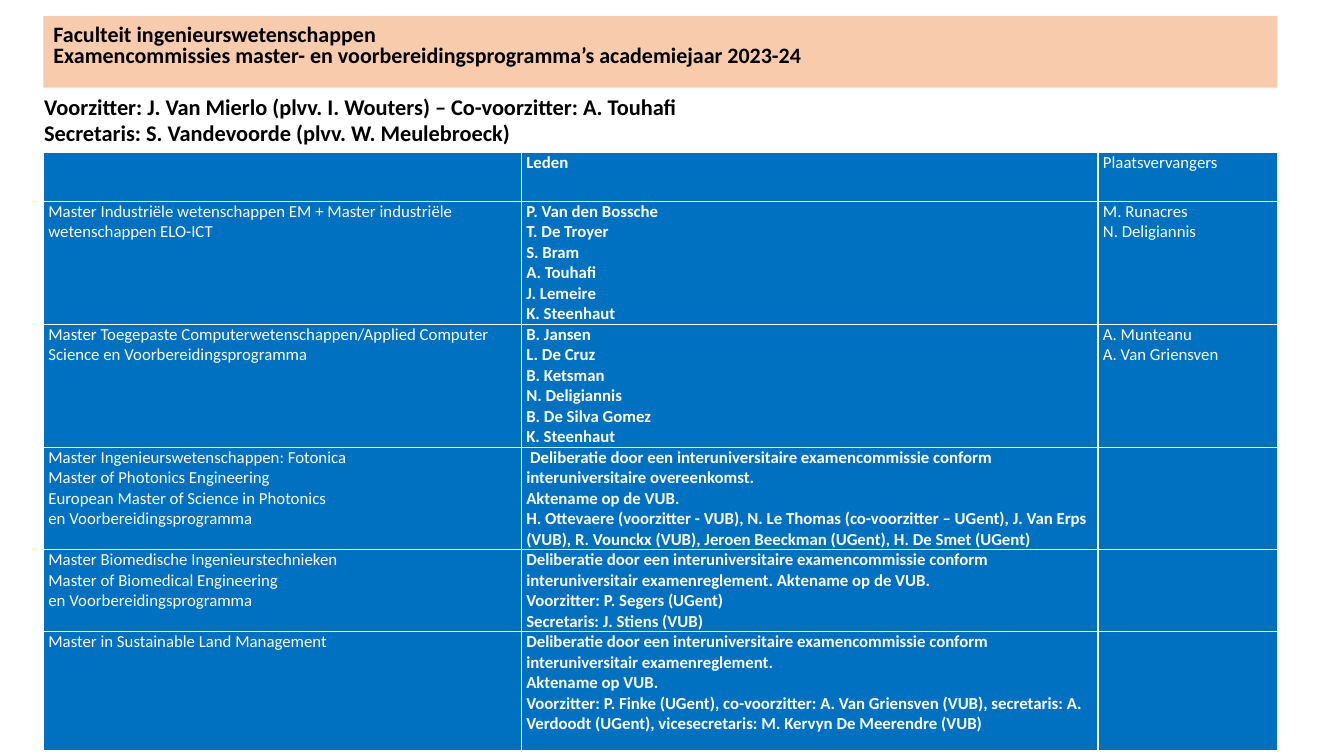
from pptx import Presentation
from pptx.dml.color import RGBColor as Rgb
from pptx.enum.text import MSO_ANCHOR as Anchor, MSO_AUTO_SIZE as AutoSize, PP_ALIGN as Align
from pptx.oxml import parse_xml
from pptx.oxml.ns import nsdecls
from pptx.util import Inches, Pt

COLORS = {"banner": "F8CBAD", "cell": "0070C0", "light": "FFFFFF", "dark": "000000"}
COLUMN_WIDTHS = [4.74, 5.72, 1.78]
ROW_HEIGHTS = [0.49, 1.18, 1.18, 0.98, 0.81, 1.18]

# Each cell is a list of paragraphs.
COMMITTEES = [
    [[], ["Leden"], ["Plaatsvervangers"]],
    [
        ["Master Industriële wetenschappen EM + Master industriële wetenschappen ELO-ICT"],
        ["P. Van den Bossche", "T. De Troyer", "S. Bram", "A. Touhafi", "J. Lemeire", "K. Steenhaut"],
        ["M. Runacres", "N. Deligiannis"],
    ],
    [
        ["Master Toegepaste Computerwetenschappen/Applied Computer Science en Voorbereidingsprogramma"],
        ["B. Jansen", "L. De Cruz", "B. Ketsman", "N. Deligiannis", "B. De Silva Gomez", "K. Steenhaut"],
        ["A. Munteanu", "A. Van Griensven"],
    ],
    [
        ["Master Ingenieurswetenschappen: Fotonica", "Master of Photonics Engineering",
         "European Master of Science in Photonics", "en Voorbereidingsprogramma"],
        [" Deliberatie door een interuniversitaire examencommissie conform interuniversitaire overeenkomst.",
         "Aktename op de VUB.",
         "H. Ottevaere (voorzitter - VUB), N. Le Thomas (co-voorzitter – UGent), J. Van Erps (VUB), "
         "R. Vounckx (VUB), Jeroen Beeckman (UGent), H. De Smet (UGent)"],
        [],
    ],
    [
        ["Master Biomedische Ingenieurstechnieken", "Master of Biomedical Engineering",
         "en Voorbereidingsprogramma"],
        ["Deliberatie door een interuniversitaire examencommissie conform interuniversitair "
         "examenreglement. Aktename op de VUB.",
         "Voorzitter: P. Segers (UGent)", "Secretaris: J. Stiens (VUB)"],
        [],
    ],
    [
        ["Master in Sustainable Land Management"],
        ["Deliberatie door een interuniversitaire examencommissie conform interuniversitair examenreglement.",
         "Aktename op VUB.",
         "Voorzitter: P. Finke (UGent), co-voorzitter: A. Van Griensven (VUB), secretaris: A. Verdoodt (UGent), "
         "vicesecretaris: M. Kervyn De Meerendre (VUB)"],
        [],
    ],
]


def apply(target, values):
    for name, value in values.items():
        setattr(target, name, value)


class CommitteeSlide:
    def __init__(self, deck):
        self.font = "Calibri"
        self.slide = deck.slides.add_slide(deck.slide_layouts[5])

    def add_lines(self, frame, lines, size, color, bold, **para_format):
        for index, line in enumerate(lines):
            para = frame.add_paragraph() if index else frame.paragraphs[0]
            apply(para, para_format)
            span = para.add_run()
            span.text = line
            apply(span.font, {"name": self.font, "size": Pt(size), "bold": bold})
            span.font.color.rgb = Rgb.from_string(COLORS[color])

    def title(self, lines, left, top, width, height):
        box = self.slide.shapes.title
        apply(box, {"left": Inches(left), "top": Inches(top),
                    "width": Inches(width), "height": Inches(height)})
        box.fill.solid()
        box.fill.fore_color.rgb = Rgb.from_string(COLORS["banner"])
        apply(box.text_frame, {"word_wrap": True, "auto_size": AutoSize.NONE,
                               "vertical_anchor": Anchor.BOTTOM, "margin_bottom": Inches(0.2)})
        self.add_lines(box.text_frame, lines, 15.7, "dark", True,
                       alignment=Align.LEFT, line_spacing=0.8, space_before=Pt(0))

    def text(self, lines, left, top, width, height):
        box = self.slide.shapes.add_textbox(*map(Inches, (left, top, width, height)))
        box.text_frame.word_wrap = True
        self.add_lines(box.text_frame, lines, 16, "dark", True)

    def border(self, cell):
        """Draw a thin line on all four sides; must run before the cell is filled."""
        properties = cell._tc.get_or_add_tcPr()
        for side in "LRTB":
            properties.append(parse_xml(
                f'<a:ln{side} w="12700" {nsdecls("a")}><a:solidFill>'
                f'<a:srgbClr val="{COLORS["light"]}"/></a:solidFill></a:ln{side}>'))

    def table(self, rows, left, top):
        frame = self.slide.shapes.add_table(
            len(rows), len(COLUMN_WIDTHS), Inches(left), Inches(top),
            Inches(sum(COLUMN_WIDTHS)), Inches(sum(ROW_HEIGHTS)))
        table = frame.table
        table.horz_banding = False
        for column, width in zip(table.columns, COLUMN_WIDTHS):
            column.width = Inches(width)
        for row, height, contents in zip(table.rows, ROW_HEIGHTS, rows):
            row.height = Inches(height)
            for index, (cell, lines) in enumerate(zip(row.cells, contents)):
                apply(cell, {"margin_left": Inches(0.05), "margin_right": Inches(0.05),
                             "margin_top": 0, "margin_bottom": 0})
                self.border(cell)
                cell.fill.solid()
                cell.fill.fore_color.rgb = Rgb.from_string(COLORS["cell"])
                self.add_lines(cell.text_frame, lines, 12, "light", index == 1)


def main():
    deck = Presentation()
    apply(deck, {"slide_width": Inches(13.33), "slide_height": Inches(7.5)})
    page = CommitteeSlide(deck)
    page.title(["Faculteit ingenieurswetenschappen",
                "Examencommissies master- en voorbereidingsprogramma’s academiejaar 2023-24"],
               0.43, 0.16, 12.24, 0.71)
    page.table(COMMITTEES, 0.43, 1.51)
    page.text(["Voorzitter: J. Van Mierlo (plvv. I. Wouters) – Co-voorzitter: A. Touhafi",
               "Secretaris: S. Vandevoorde (plvv. W. Meulebroeck)"],
              0.34, 0.87, 12.33, 0.64)
    deck.save("out.pptx")


if __name__ == "__main__":
    main()
